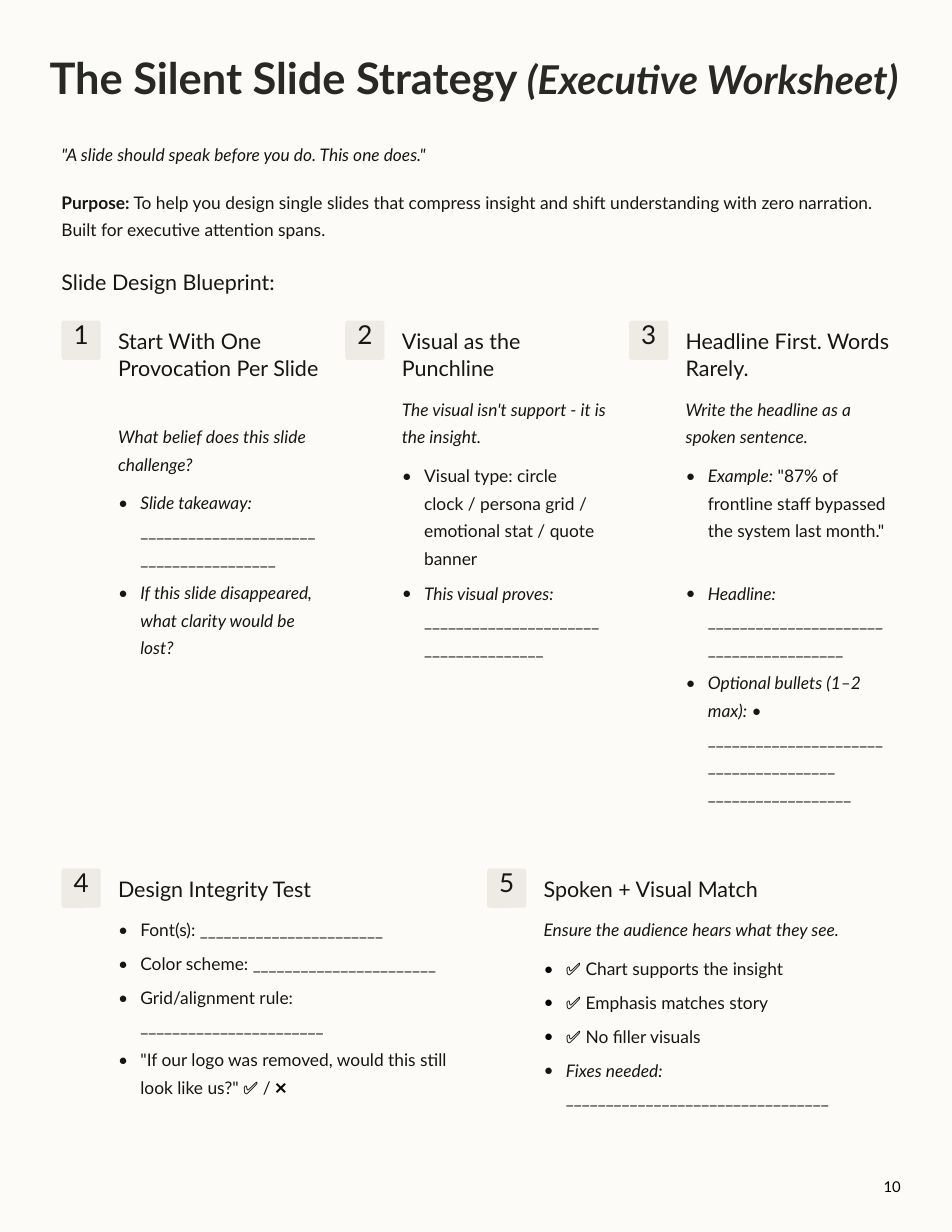
"""Builds the one-page worksheet on silent slides."""
from dataclasses import dataclass
from typing import NamedTuple, Optional

from lxml import etree
from pptx import Presentation
from pptx import util as u
from pptx.dml.color import RGBColor
from pptx.enum import shapes, text
from pptx.oxml import ns
from pptx.slide import Slide

CREAM = RGBColor(0xFD, 0xFB, 0xF7)
SAND = RGBColor(0xED, 0xEB, 0xE3)
COAL = RGBColor(0x28, 0x28, 0x24)
INK = RGBColor(0x16, 0x16, 0x13)
BLACK = RGBColor(0, 0, 0)

FACE = "Lato"
LEFT = 74.4
FULL = 1004.4
BADGE = 47.5
SHIFT = 68.4
HANG = 27
ROW = 33.75
HEAD = 33
WIDE_GAP = 13
GAP = 7.3


class Run(NamedTuple):
    """A stretch of text in one style."""
    words: str
    bold: bool = False
    slant: bool = False
    size: Optional[float] = None
    ink: Optional[RGBColor] = None


class Line(NamedTuple):
    """A paragraph of a card and the rows it takes."""
    rows: int
    runs: list[Run]
    dot: bool = True


@dataclass
class Card:
    """A numbered block of the worksheet."""
    title: str
    rows: int
    lines: list[Line]


def plain(words: str) -> Run:
    """Return an upright run."""
    return Run(words)


def slant(words: str) -> Run:
    """Return an italic run."""
    return Run(words, slant=True)


def mark(sign: str) -> Run:
    """Return a black sign."""
    return Run(sign, ink=BLACK)


def blank(count: int) -> Run:
    """Return a rule to write on."""
    return Run(" " + "_" * count)


def check(words: str) -> Line:
    """Return a ticked line."""
    return Line(1, [mark("✅"), plain(" " + words)])


TOP = [
    Card("Start With One Provocation Per Slide", 3, [
        Line(2, [slant("What belief does this slide challenge?")], False),
        Line(3, [slant("Slide takeaway:"), blank(39)]),
        Line(3, [slant("If this slide disappeared, what clarity would be lost?")]),
    ]),
    Card("Visual as the Punchline", 2, [
        Line(2, [slant("The visual isn't support - it is the insight.")], False),
        Line(4, [plain("Visual type: circle clock / persona grid / emotional stat / quote banner")]),
        Line(3, [slant("This visual proves:"), blank(37)]),
    ]),
    Card("Headline First. Words Rarely.", 2, [
        Line(2, [slant("Write the headline as a spoken sentence.")], False),
        Line(4, [slant("Example:"),
                 plain(" \"87% of frontline staff bypassed the system last month.\"")]),
        Line(3, [slant("Headline:"), blank(39)]),
        Line(6, [slant("Optional bullets (1–2 max):"), plain(" •"), blank(38), blank(18)]),
    ]),
]
BASE = [
    Card("Design Integrity Test", 1, [
        Line(1, [plain("Font(s):"), blank(23)]),
        Line(1, [plain("Color scheme:"), blank(23)]),
        Line(2, [plain("Grid/alignment rule:"), blank(23)]),
        Line(2, [plain("\"If our logo was removed, would this still look like us?\" "),
                 mark("✅"), plain(" / "), mark("❌")]),
    ]),
    Card("Spoken + Visual Match", 1, [
        Line(1, [slant("Ensure the audience hears what they see.")], False),
        check("Chart supports the insight"),
        check("Emphasis matches story"),
        check("No filler visuals"),
        Line(2, [slant("Fixes needed:"), blank(33)]),
    ]),
]


def write(slide: Slide, runs: list[Run], *, x: float, y: float, w: float, h: float,
          size: float = 21, lead: float = 33.5, ink: RGBColor = INK,
          dot: bool = False, mid: bool = False) -> None:
    """Write the runs in a box, wrapped if it holds more than one row."""
    box = slide.shapes.add_textbox(u.Pt(x), u.Pt(y), u.Pt(w), u.Pt(h))
    frame = box.text_frame
    frame.margin_left = frame.margin_right = frame.margin_top = frame.margin_bottom = 0
    frame.word_wrap = h > lead * 1.5
    par = frame.paragraphs[0]
    if dot:
        props = par._p.get_or_add_pPr()
        props.set("marL", str(u.Pt(HANG)))
        props.set("indent", str(-u.Pt(HANG)))
        etree.SubElement(props, ns.qn("a:buFont")).set("typeface", FACE)
        etree.SubElement(props, ns.qn("a:buChar")).set("char", "•")
    par.line_spacing = u.Pt(lead)
    par.alignment = text.PP_ALIGN.CENTER if mid else text.PP_ALIGN.LEFT
    for run in runs:
        piece = par.add_run()
        piece.text = run.words
        font = piece.font
        font.name = FACE
        font.size = u.Pt(run.size or size)
        font.bold = run.bold
        font.italic = run.slant
        font.color.rgb = run.ink or ink


def draw_badge(slide: Slide, num: int, x: float, y: float) -> None:
    """Draw a numbered square."""
    badge = slide.shapes.add_shape(shapes.MSO_SHAPE.ROUNDED_RECTANGLE,
                                   u.Pt(x), u.Pt(y), u.Pt(BADGE), u.Pt(BADGE))
    badge.adjustments[0] = 0.07
    badge.shadow.inherit = False
    badge.fill.solid()
    badge.fill.fore_color.rgb = SAND
    badge.line.fill.background()
    write(slide, [plain(str(num))], x=x + 7.9, y=y + 4, w=31.7, h=39.6,
          size=31.5, lead=31.5, mid=True)


def draw_card(slide: Slide, card: Card, num: int, x: float, y: float, w: float) -> None:
    """Draw a card, its lines flowing down from the title."""
    draw_badge(slide, num, x, y)
    x, y = x + SHIFT, y + 7.2
    write(slide, [plain(card.title)], x=x, y=y, w=w, h=card.rows * HEAD, size=26, lead=HEAD)
    y += card.rows * HEAD + WIDE_GAP
    for line in card.lines:
        high = line.rows * ROW
        write(slide, line.runs, x=x, y=y, w=w, h=high, dot=line.dot)
        y += high + (GAP if line.dot else WIDE_GAP)


def draw_row(slide: Slide, cards: list[Card], first: int, y: float, step: float) -> None:
    """Draw cards side by side at equal steps."""
    for i, card in enumerate(cards):
        draw_card(slide, card, first + i, LEFT + i * step, y, step - 95)


def main() -> None:
    """Build and save the sheet."""
    deck = Presentation()
    deck.slide_width, deck.slide_height = u.Pt(1152), u.Pt(1491.12)
    slide = deck.slides.add_slide(deck.slide_layouts[6])
    slide.background.fill.solid()
    slide.background.fill.fore_color.rgb = CREAM

    write(slide, [Run("The Silent Slide Strategy ", bold=True),
                  Run("(Executive Worksheet)", bold=True, slant=True, size=48)],
          x=60, y=58.3, w=1060, h=66, size=52.5, lead=66, ink=COAL)
    write(slide, [slant("\"A slide should speak before you do. This one does.\"")],
          x=LEFT, y=166.3, w=FULL, h=ROW)
    write(slide, [Run("Purpose:", bold=True),
                  plain(" To help you design single slides that compress insight and shift "
                        "understanding with zero narration. Built for executive attention spans.")],
          x=LEFT, y=224, w=FULL, h=2 * ROW)
    write(slide, [plain("Slide Design Blueprint:")],
          x=LEFT, y=323.3, w=277, h=HEAD, size=26, lead=HEAD)
    draw_row(slide, TOP, 1, 388.1, 343.4)
    draw_row(slide, BASE, len(TOP) + 1, 1051.2, 515)
    write(slide, [plain("10")], x=1069.2, y=1424.9, w=53, h=22, size=18, lead=21.6, ink=BLACK)
    deck.save("out.pptx")


if __name__ == "__main__":
    main()
